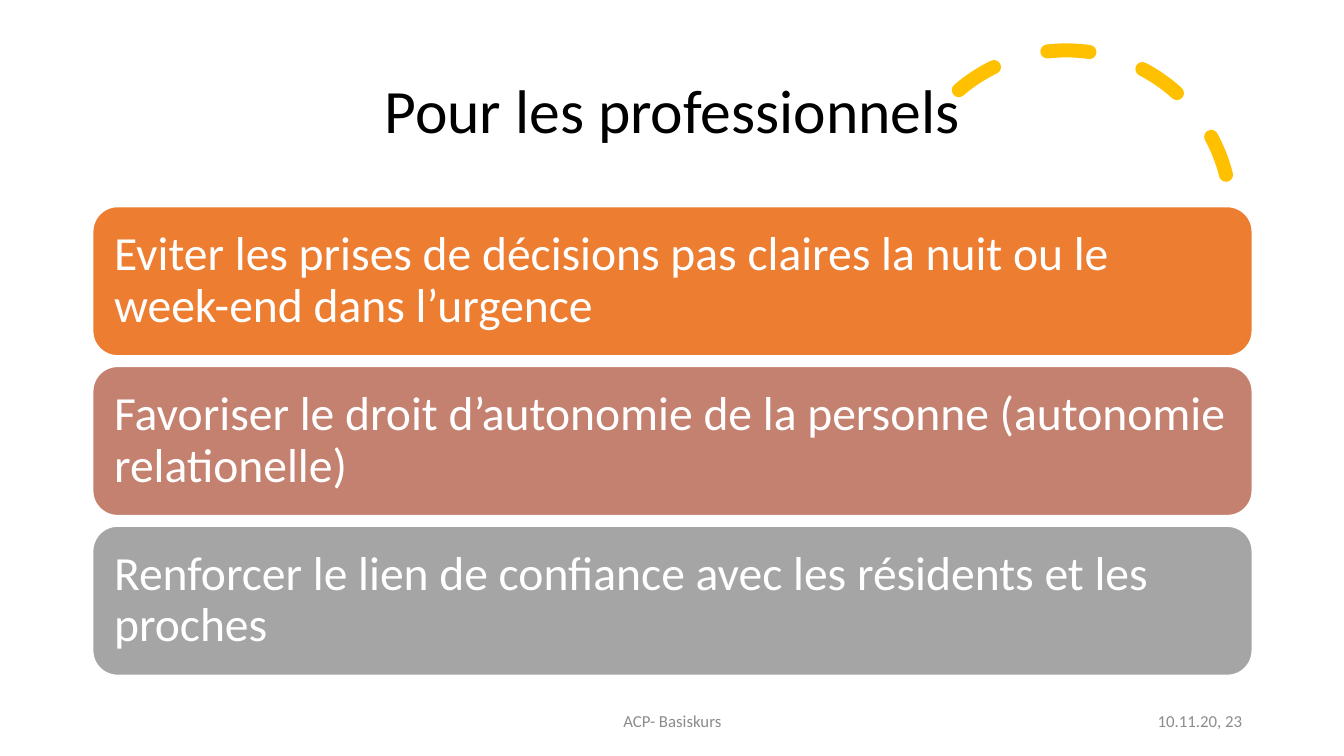
from dataclasses import dataclass

from pptx import Presentation
from pptx.dml.color import RGBColor
from pptx.enum.dml import MSO_LINE
from pptx.enum.shapes import MSO_SHAPE
from pptx.enum.text import MSO_ANCHOR, PP_ALIGN
from pptx.util import Inches, Pt


@dataclass(frozen=True)
class Theme:
    font: str = "Calibri"
    black: str = "000000"
    white: str = "FFFFFF"
    gray: str = "8C8C8C"
    gold: str = "FFC000"
    title: int = 44
    body: int = 34
    small: int = 12


THEME = Theme()
GOALS = [
    ("Eviter les prises de décisions pas claires la nuit ou le week-end dans l’urgence", "ED7D31"),
    ("Favoriser le droit d’autonomie de la personne (autonomie relationelle)", "C48170"),
    ("Renforcer le lien de confiance avec les résidents et les proches", "A5A5A5"),
]
LEFT, WIDTH = 0.92, 11.5
TOP, HEIGHT, PITCH = 2.05, 1.48, 1.585


def color(code):
    return RGBColor.from_string(code)


def write(shape, text, size, ink, align, spacing=None):
    frame = shape.text_frame
    frame.word_wrap = True
    frame.vertical_anchor = MSO_ANCHOR.MIDDLE
    frame.text = text
    para = frame.paragraphs[0]
    para.alignment = align
    para.line_spacing = spacing
    font = para.runs[0].font
    font.name = THEME.font
    font.size = Pt(size)
    font.color.rgb = color(ink)


def add_label(slide, box, text, size, ink, align, spacing=None):
    label = slide.shapes.add_textbox(*map(Inches, box))
    write(label, text, size, ink, align, spacing)


def add_arc(slide):
    """Draw the dashed, round-capped arc beside the title."""
    arc = slide.shapes.add_shape(
        MSO_SHAPE.ARC, Inches(8.94), Inches(0.5), Inches(3.27), Inches(3.27))
    arc.shadow.inherit = False
    arc.adjustments[0] = 146.13
    arc.adjustments[1] = 0
    arc.rotation = 345.8
    arc.fill.background()
    arc.line.color.rgb = color(THEME.gold)
    arc.line.width = Pt(10)
    arc.line.dash_style = MSO_LINE.DASH
    arc.line._get_or_add_ln().set("cap", "rnd")


def add_goal(slide, top, text, fill):
    goal = slide.shapes.add_shape(
        MSO_SHAPE.ROUNDED_RECTANGLE,
        Inches(LEFT), Inches(top), Inches(WIDTH), Inches(HEIGHT))
    goal.shadow.inherit = False
    goal.fill.solid()
    goal.fill.fore_color.rgb = color(fill)
    goal.line.color.rgb = color(THEME.white)
    goal.line.width = Pt(1)
    frame = goal.text_frame
    frame.margin_left = frame.margin_right = Inches(0.14)
    frame.margin_top = frame.margin_bottom = Inches(0.14)
    write(goal, text, THEME.body, THEME.white, PP_ALIGN.LEFT, 0.9)


def main():
    deck = Presentation()
    deck.slide_width, deck.slide_height = Inches(13.33), Inches(7.5)
    slide = deck.slides.add_slide(deck.slide_layouts[6])
    add_arc(slide)
    add_label(slide, (LEFT, 0.4, WIDTH, 1.45), "Pour les professionnels",
              THEME.title, THEME.black, PP_ALIGN.CENTER, 0.9)
    for row, (text, fill) in enumerate(GOALS):
        add_goal(slide, TOP + row * PITCH, text, fill)
    add_label(slide, (4.42, 6.95, 4.5, 0.4), "ACP- Basiskurs",
              THEME.small, THEME.gray, PP_ALIGN.CENTER)
    add_label(slide, (9.42, 6.95, 3, 0.4), "10.11.20, 23",
              THEME.small, THEME.gray, PP_ALIGN.RIGHT)
    deck.save("out.pptx")


if __name__ == "__main__":
    main()
